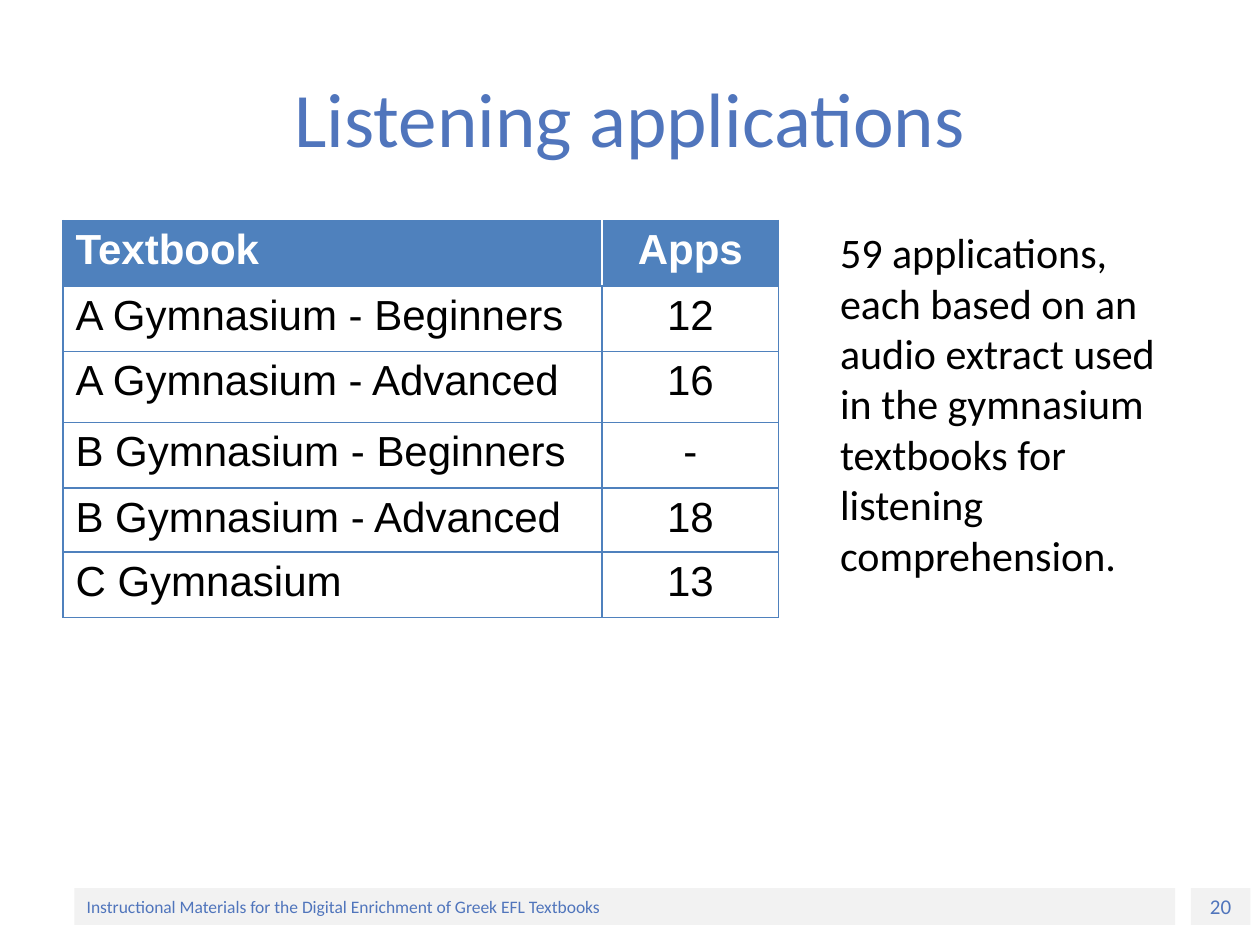
from lxml.etree import SubElement
from pptx import Presentation
from pptx.dml.color import RGBColor
from pptx.enum.shapes import MSO_SHAPE
from pptx.enum.text import MSO_ANCHOR, PP_ALIGN
from pptx.oxml.ns import qn
from pptx.util import Pt

TEXTBOOK_APPS = [
    ("Textbook", "Apps"),
    ("A Gymnasium - Beginners", "12"),
    ("A Gymnasium - Advanced", "16"),
    ("B Gymnasium - Beginners", "-"),
    ("B Gymnasium - Advanced", "18"),
    ("C Gymnasium", "13"),
]


def color(hex_code):
    return RGBColor.from_string(hex_code)


def write(frame, text, size=24, font="Calibri", fill="000000", bold=False,
          align=PP_ALIGN.LEFT, anchor=MSO_ANCHOR.TOP):
    frame.word_wrap = True
    frame.vertical_anchor = anchor
    paragraph = frame.paragraphs[0]
    paragraph.alignment = align
    run = paragraph.add_run()
    run.text = text
    run.font.size = Pt(size)
    run.font.name = font
    run.font.bold = bold
    run.font.color.rgb = color(fill)


class SlideBuilder:
    """Draws styled elements on the current slide."""

    blue = "5075BC"
    table_blue = "4F81BD"
    band_gray = "F2F2F2"
    white = "FFFFFF"

    def __init__(self, slide):
        self.slide = slide

    def text(self, box, text, **style):
        label = self.slide.shapes.add_textbox(*map(Pt, box))
        write(label.text_frame, text, **style)

    def band(self, box, text, **style):
        band = self.slide.shapes.add_shape(MSO_SHAPE.RECTANGLE, *map(Pt, box))
        band.shadow.inherit = False
        band.fill.solid()
        band.fill.fore_color.rgb = color(self.band_gray)
        band.line.fill.background()
        write(band.text_frame, text, fill=self.blue, anchor=MSO_ANCHOR.MIDDLE, **style)

    def borders(self, cell, **sides):
        properties = cell._tc.get_or_add_tcPr()
        for side in "LRTB":
            line = SubElement(properties, qn(f"a:ln{side}"), w=str(Pt(1)))
            solid = SubElement(line, qn("a:solidFill"))
            SubElement(solid, qn("a:srgbClr"), val=sides.get(side, self.table_blue))

    def table(self, left, top, widths, heights, rows):
        box = map(Pt, (left, top, sum(widths), sum(heights)))
        table = self.slide.shapes.add_table(len(rows), len(widths), *box).table
        table.first_row = table.horz_banding = False
        for column, width in zip(table.columns, widths):
            column.width = Pt(width)
        for row, height in zip(table.rows, heights):
            row.height = Pt(height)
        for r, values in enumerate(rows):
            header = r == 0
            for c, value in enumerate(values):
                cell = table.cell(r, c)
                divider = {"L" if c else "R": self.white} if header else {}
                self.borders(cell, **divider)
                if header:
                    cell.fill.solid()
                    cell.fill.fore_color.rgb = color(self.table_blue)
                else:
                    cell.fill.background()
                write(cell.text_frame, value, font="Arial", bold=header,
                      fill=self.white if header else "000000",
                      align=PP_ALIGN.CENTER if c else PP_ALIGN.LEFT)


def main():
    deck = Presentation()
    deck.slide_width, deck.slide_height = Pt(720), Pt(540)
    builder = SlideBuilder(deck.slides.add_slide(deck.slide_layouts[6]))

    builder.band((680.5, 507.5, 34, 21), "20", size=12, align=PP_ALIGN.CENTER)
    builder.band((42.5, 507.5, 629, 21),
                 "Instructional Materials for the Digital Enrichment of Greek EFL Textbooks",
                 size=10)
    builder.text((36, 21.6, 648, 90), "Listening applications", size=44,
                 fill=builder.blue, align=PP_ALIGN.CENTER, anchor=MSO_ANCHOR.MIDDLE)
    builder.table(36, 126, (308, 101), (37.5, 37.5, 40.5, 37.5, 36.5, 37.5), TEXTBOOK_APPS)
    builder.text((473, 126, 211, 356),
                 "59 applications, each based on an audio extract used in the gymnasium "
                 "textbooks for listening comprehension.")
    deck.save("out.pptx")


if __name__ == "__main__":
    main()
